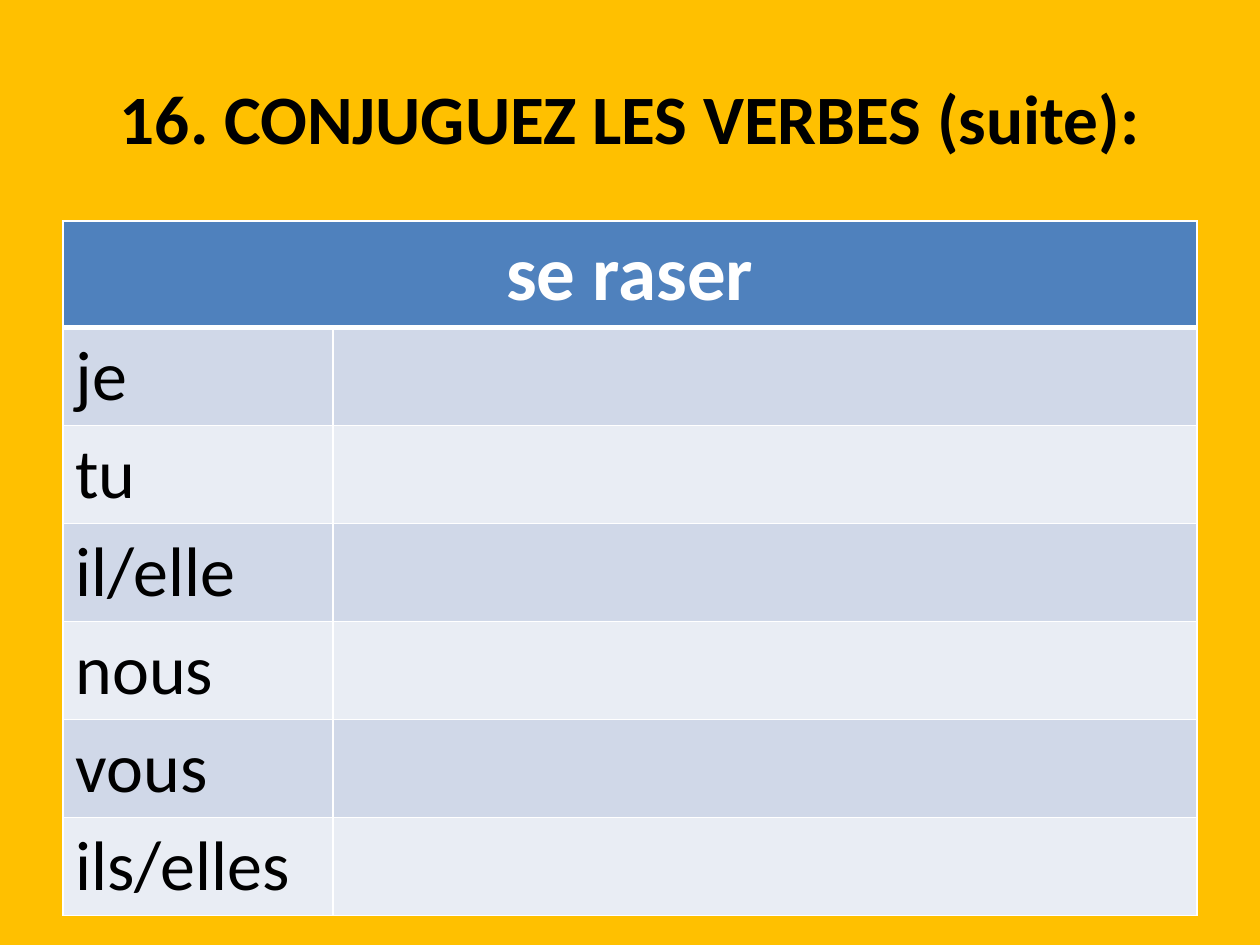
from lxml import etree
from pptx import Presentation
from pptx.dml.color import RGBColor
from pptx.enum.text import MSO_ANCHOR, PP_ALIGN
from pptx.oxml.ns import qn
from pptx.util import Emu, Pt

PX = 914400 // 126
CENTER, LEFT = PP_ALIGN.CENTER, PP_ALIGN.LEFT
MIDDLE = MSO_ANCHOR.MIDDLE
FONT = "Calibri"
WHITE, BLACK, GOLD, BLUE = "FFFFFF", "000000", "FFC000", "4F81BD"
BANDS = ("D0D8E8", "E9EDF4")
VERB = "se raser"
FORMS = ("je", "tu", "il/elle", "nous", "vous", "ils/elles")


def px(n):
    return Emu(n * PX)


def paint(fill, color):
    fill.solid()
    fill.fore_color.rgb = RGBColor.from_string(color)


def write(frame, text, size, color, bold, align):
    frame.text = text
    para = frame.paragraphs[0]
    para.alignment = align
    font = para.font
    font.name, font.size, font.bold = FONT, Pt(size), bold
    font.color.rgb = RGBColor.from_string(color)


def edge(cell, top, bottom):
    """Draw white borders; widths in points."""
    props = cell._tc.get_or_add_tcPr()
    for side, width in (("L", 1), ("R", 1), ("T", top), ("B", bottom)):
        line = etree.SubElement(props, qn(f"a:ln{side}"), w=str(Pt(width)))
        fill = etree.SubElement(line, qn("a:solidFill"))
        etree.SubElement(fill, qn("a:srgbClr"), val=WHITE)


def add_title(slide, text):
    title = slide.shapes.title
    title.left, title.top = px(63), px(38)
    title.width, title.height = px(1134), px(157)
    title.text_frame.vertical_anchor = MIDDLE
    write(title.text_frame, text, 39.6, BLACK, True, CENTER)


def add_verb(slide, verb, forms):
    widths = (270, 864)
    heights = [106] + [98] * len(forms)
    table = slide.shapes.add_table(
        len(heights), len(widths), px(63), px(221),
        px(sum(widths)), px(sum(heights))).table
    for col, width in zip(table.columns, widths):
        col.width = px(width)

    # Borders and banded fills
    for i, (row, height) in enumerate(zip(table.rows, heights)):
        row.height = px(height)
        for cell in row.cells:
            edge(cell, 3 if i == 1 else 1, 3 if i == 0 else 1)
            paint(cell.fill, BANDS[(i - 1) % 2] if i else BLUE)

    # Verb across the top, pronouns down the left
    head = table.cell(0, 0)
    head.merge(table.cell(0, 1))
    write(head.text_frame, verb, 44, WHITE, True, CENTER)
    for i, form in enumerate(forms, 1):
        write(table.cell(i, 0).text_frame, form, 40, BLACK, False, LEFT)


def main():
    deck = Presentation()
    deck.slide_width, deck.slide_height = px(1260), px(945)
    slide = deck.slides.add_slide(deck.slide_layouts[5])
    paint(slide.background.fill, GOLD)
    add_title(slide, "16. CONJUGUEZ LES VERBES (suite):")
    add_verb(slide, VERB, FORMS)
    deck.save("out.pptx")


if __name__ == "__main__":
    main()
